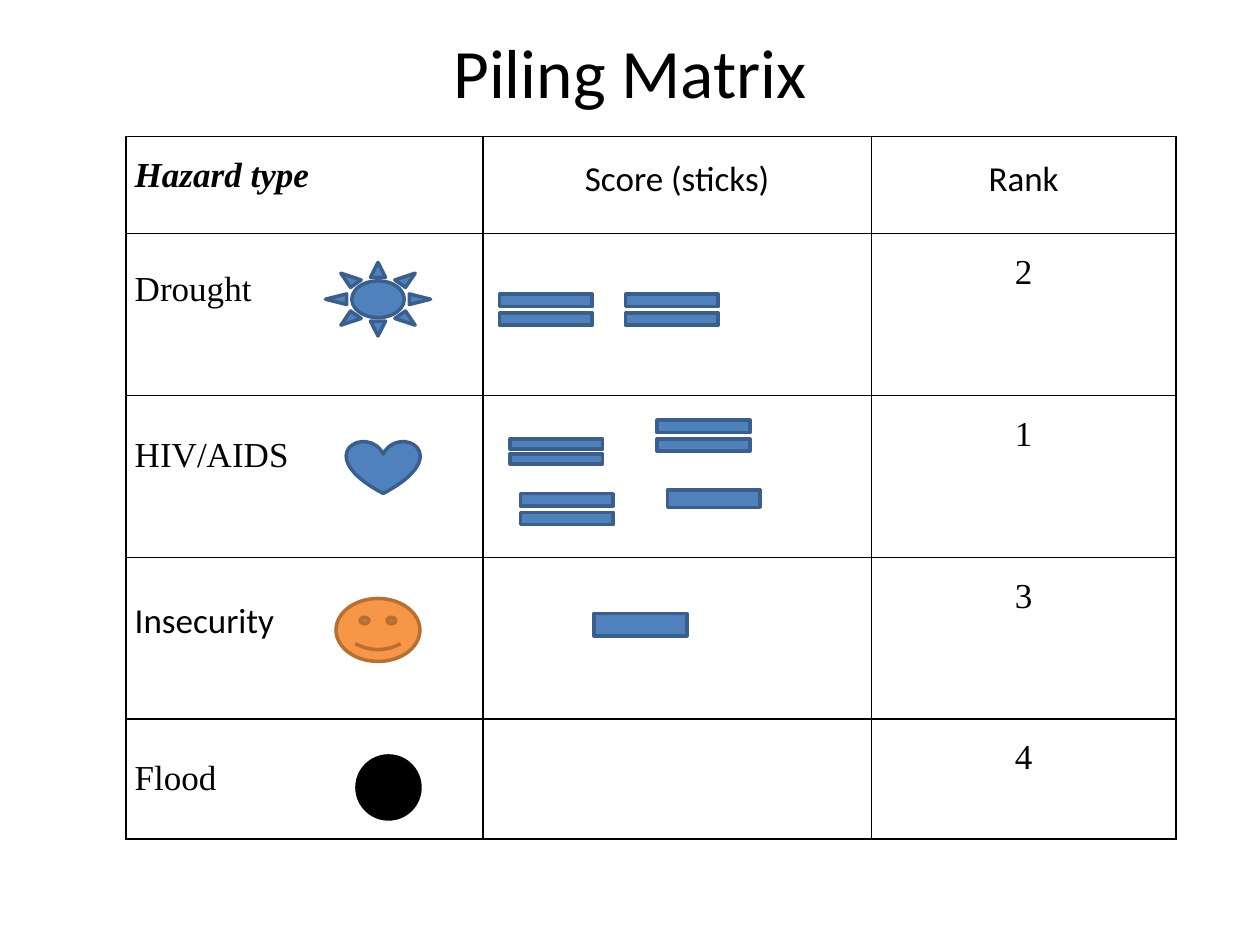
"""Build the Piling Matrix slide: hazards scored with sticks and ranked."""
from dataclasses import dataclass
from typing import Any

from lxml import etree
from pptx import Presentation
from pptx.dml.color import RGBColor
from pptx.enum.shapes import MSO_SHAPE
from pptx.enum.text import MSO_ANCHOR, MSO_AUTO_SIZE, PP_ALIGN
from pptx.oxml.ns import qn
from pptx.util import Pt

CENTER, JUSTIFY = PP_ALIGN.CENTER, PP_ALIGN.JUSTIFY
MIDDLE, TOP = MSO_ANCHOR.MIDDLE, MSO_ANCHOR.TOP
NO_AUTOFIT = MSO_AUTO_SIZE.NONE
EQUAL, MINUS = MSO_SHAPE.MATH_EQUAL, MSO_SHAPE.MATH_MINUS
SUN, HEART = MSO_SHAPE.SUN, MSO_SHAPE.HEART
SMILEY, OVAL = MSO_SHAPE.SMILEY_FACE, MSO_SHAPE.OVAL

BLACK = RGBColor(0x00, 0x00, 0x00)
BLUE = RGBColor(0x4F, 0x81, 0xBD)
DARK_BLUE = RGBColor(0x3A, 0x5F, 0x8C)
ORANGE = RGBColor(0xF7, 0x96, 0x46)
DARK_ORANGE = RGBColor(0xB7, 0x6F, 0x34)

SANS, SERIF = "Calibri", "Times New Roman"
COLUMN_WIDTHS = (204, 222, 174)
ROW_HEIGHTS = (55.5, 92.5, 92.5, 92.5, 68.5)
STICK_WIDTH = 72


@dataclass(frozen=True)
class Entry:
    text: str
    font: str = SERIF
    align: PP_ALIGN = CENTER
    drop: float = 0
    emphasis: bool = False


@dataclass(frozen=True)
class Symbol:
    kind: MSO_SHAPE
    left: float
    top: float
    width: float
    height: float
    fill: RGBColor = BLUE
    line: RGBColor = DARK_BLUE


MATRIX = (
    (Entry("Hazard type", align=JUSTIFY, emphasis=True),
     Entry("Score (sticks)", SANS), Entry("Rank", SANS)),
    (Entry("Drought", align=JUSTIFY, drop=10), None, Entry("2")),
    (Entry("HIV/AIDS", align=JUSTIFY, drop=12.5), None, Entry("1")),
    (Entry("Insecurity", SANS, JUSTIFY, 12.5), None, Entry("3")),
    (Entry("Flood", align=JUSTIFY, drop=12), None, Entry("4")),
)

HAZARD_SYMBOLS = (
    Symbol(OVAL, 204, 432, 36, 36, BLACK, BLACK),
    Symbol(SMILEY, 192, 342, 48, 36, ORANGE, DARK_ORANGE),
    Symbol(SUN, 186, 150, 60, 42),
    Symbol(HEART, 198, 252, 42, 30),
)

STICKS = tuple(
    Symbol(kind, left, top, STICK_WIDTH, height)
    for kind, left, top, height in (
        (EQUAL, 348, 162, 30),
        (EQUAL, 288, 276, 30),
        (EQUAL, 276, 162, 30),
        (MINUS, 372, 264, 42),
        (EQUAL, 282, 246, 24),
        (EQUAL, 366, 234, 30),
        (MINUS, 330, 330, 54),
    )
)


def apply_format(target: Any, values: dict[str, Any]) -> None:
    """Set each named attribute on the target."""
    for name, value in values.items():
        setattr(target, name, value)


def add_title(slide: Any, text: str) -> None:
    """Place and format the title placeholder."""
    title = slide.shapes.title
    apply_format(title, {"left": Pt(36), "top": Pt(21.6),
                         "width": Pt(648), "height": Pt(38)})
    frame = title.text_frame
    frame.text = text
    apply_format(frame, {"auto_size": NO_AUTOFIT, "vertical_anchor": MIDDLE})
    heading = frame.paragraphs[0]
    heading.alignment = CENTER
    apply_format(heading.font, {"name": SANS, "size": Pt(39.6)})
    heading.font.color.rgb = BLACK


def add_borders(cell: Any) -> None:
    """Give a cell thin black borders on all sides."""
    properties = cell._tc.get_or_add_tcPr()
    for side in ("lnL", "lnR", "lnT", "lnB"):
        border = etree.SubElement(properties, qn(f"a:{side}"), w=str(Pt(1)))
        fill = etree.SubElement(border, qn("a:solidFill"))
        etree.SubElement(fill, qn("a:srgbClr"), val=str(BLACK))


def fill_cell(cell: Any, entry: Entry | None) -> None:
    """Format a cell and write its entry, if any."""
    add_borders(cell)
    cell.fill.background()
    apply_format(cell, {"margin_left": Pt(5), "margin_right": Pt(5),
                        "margin_top": Pt(entry.drop if entry else 0),
                        "margin_bottom": Pt(0), "vertical_anchor": TOP})
    if entry is None:
        return
    cell.text = entry.text
    paragraph = cell.text_frame.paragraphs[0]
    apply_format(paragraph, {"alignment": entry.align, "line_spacing": 1.5})
    apply_format(paragraph.font, {"name": entry.font, "size": Pt(20),
                                  "bold": entry.emphasis,
                                  "italic": entry.emphasis})
    paragraph.font.color.rgb = BLACK


def add_matrix(slide: Any) -> None:
    """Draw the hazard table."""
    matrix = slide.shapes.add_table(
        len(ROW_HEIGHTS), len(COLUMN_WIDTHS), Pt(72), Pt(78),
        Pt(sum(COLUMN_WIDTHS)), Pt(sum(ROW_HEIGHTS))).table
    apply_format(matrix, {"first_row": False, "horz_banding": False})
    for column, width in zip(matrix.columns, COLUMN_WIDTHS):
        column.width = Pt(width)
    for row, height, entries in zip(matrix.rows, ROW_HEIGHTS, MATRIX):
        row.height = Pt(height)
        for cell, entry in zip(row.cells, entries):
            fill_cell(cell, entry)


def add_symbol(slide: Any, symbol: Symbol) -> None:
    """Draw one hazard symbol or stick mark."""
    mark = slide.shapes.add_shape(
        symbol.kind, Pt(symbol.left), Pt(symbol.top),
        Pt(symbol.width), Pt(symbol.height))
    mark.shadow.inherit = False
    mark.fill.solid()
    mark.fill.fore_color.rgb = symbol.fill
    mark.line.color.rgb = symbol.line
    mark.line.width = Pt(2)


def main() -> None:
    """Build and save the slide."""
    deck = Presentation()
    apply_format(deck, {"slide_width": Pt(720), "slide_height": Pt(540)})
    slide = deck.slides.add_slide(deck.slide_layouts[5])
    add_title(slide, "Piling Matrix")
    add_matrix(slide)
    for symbol in HAZARD_SYMBOLS + STICKS:
        add_symbol(slide, symbol)
    deck.save("out.pptx")


if __name__ == "__main__":
    main()
